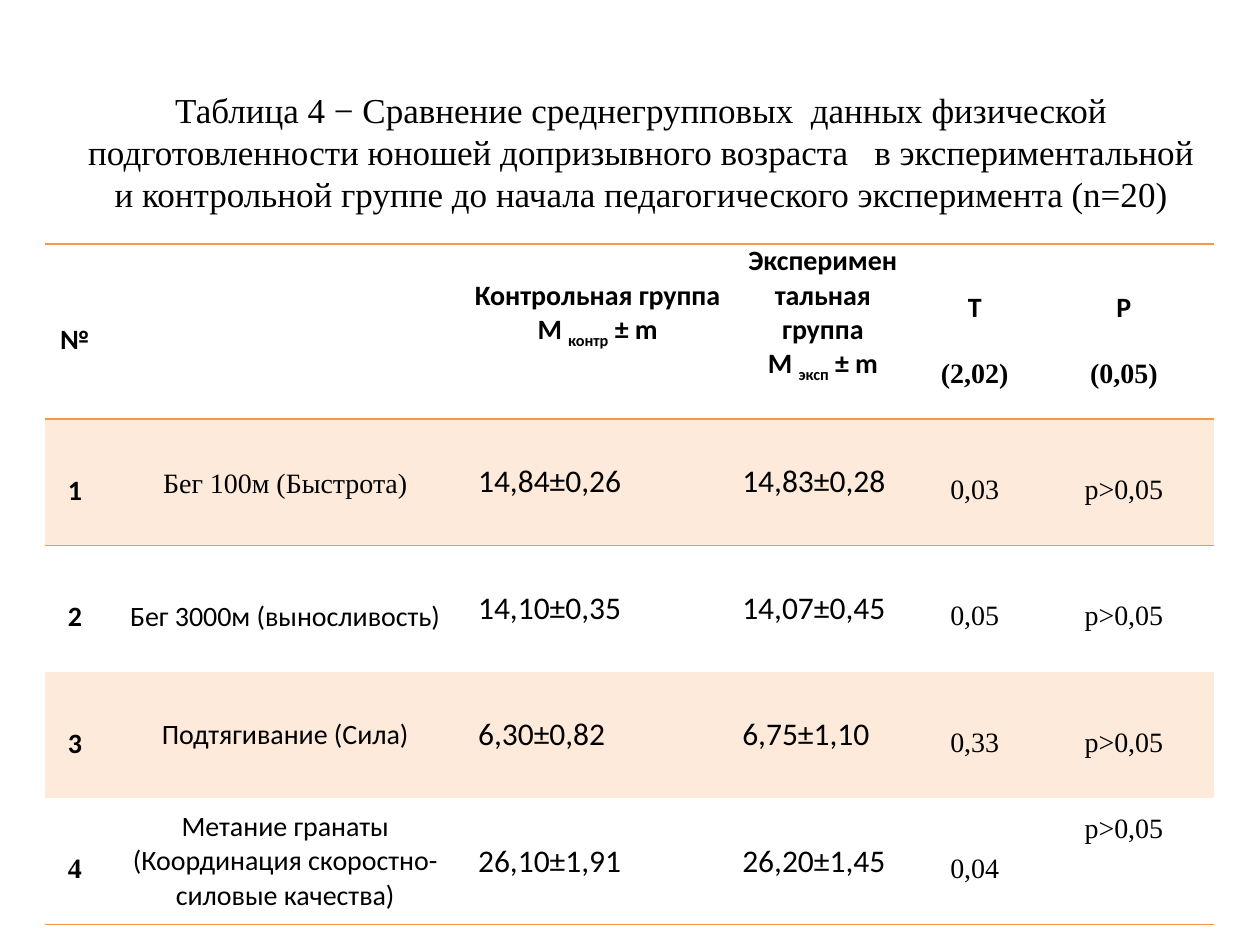
from lxml import etree
from pptx import Presentation
from pptx.dml.color import RGBColor
from pptx.enum.text import MSO_ANCHOR, MSO_AUTO_SIZE, PP_ALIGN
from pptx.oxml.ns import qn
from pptx.util import Pt

CENTER, LEFT = PP_ALIGN.CENTER, PP_ALIGN.LEFT
MIDDLE, TOP = MSO_ANCHOR.MIDDLE, MSO_ANCHOR.TOP
NO_AUTOFIT = MSO_AUTO_SIZE.NONE

COLORS = {"text": "000000", "rule": "F79646", "band": "FDEADA"}
SANS, SERIF = "Calibri", "Times New Roman"
PLAIN_TABLE_STYLE = "{2D5ABB26-0587-4C30-8999-92F81FD0307C}"

TITLE = (
    "Таблица 4 − Сравнение среднегрупповых  данных физической "
    "подготовленности юношей допризывного возраста   в экспериментальной "
    "и контрольной группе до начала педагогического эксперимента (n=20)"
)
COLUMN_WIDTHS = [34.5, 206, 151, 106.5, 67, 103.5]
HEADER_HEIGHT, ROW_HEIGHT = 98, 72.25
HEADER_LINE = 19.5

TIGHT = {"alignment": CENTER}
RELAXED = {"alignment": CENTER, "line_spacing": 1.5, "space_after": Pt(10)}
LOOSE = {"alignment": CENTER, "line_spacing": 1.15}
FLUSH = {"alignment": LEFT}

BOLD = {"name": SANS, "size": Pt(16), "bold": True}
BOLD_SERIF = {**BOLD, "name": SERIF}
BODY = {**BOLD, "bold": False}
BODY_SERIF = {**BODY, "name": SERIF}
MEASURE = {**BODY, "size": Pt(18)}

# Each test: name, paragraph format, font, control, experimental, T
TESTS = [
    ("Бег 100м (Быстрота)", LOOSE, BODY_SERIF, "14,84±0,26", "14,83±0,28", "0,03"),
    ("Бег 3000м (выносливость)", RELAXED, BODY, "14,10±0,35", "14,07±0,45", "0,05"),
    ("Подтягивание (Сила)", TIGHT, BODY, "6,30±0,82", "6,75±1,10", "0,33"),
    ("Метание гранаты (Координация скоростно-силовые качества)", TIGHT, BODY,
     "26,10±1,91", "26,20±1,45", "0,04"),
]


def apply(target, values):
    for name, value in values.items():
        setattr(target, name, value)


def add_span(para, text, font, subscript=False):
    span = para.add_run()
    span.text = text
    apply(span.font, font)
    span.font.color.rgb = RGBColor.from_string(COLORS["text"])
    if subscript:
        span.font._element.set("baseline", "-25000")


def next_para(frame, layout):
    """Return the empty first paragraph, or a new one, with its format set."""
    first = frame.paragraphs[0]
    para = frame.add_paragraph() if first.runs else first
    apply(para, layout)
    return para


def write_cell(cell, text, layout, font):
    """Write each line of text as a paragraph in a narrow-margin cell."""
    apply(cell, {"vertical_anchor": MIDDLE, "margin_left": Pt(4.5),
                 "margin_right": Pt(4.5), "margin_top": 0, "margin_bottom": 0})
    for line in text.split("\n"):
        add_span(next_para(cell.text_frame, layout), line, font)


def write_measure(cell, text):
    cell.vertical_anchor = MIDDLE
    add_span(next_para(cell.text_frame, FLUSH), text, MEASURE)


def write_group_header(cell, name, index):
    write_cell(cell, name, TIGHT, BOLD)
    cell.margin_bottom = Pt(HEADER_LINE)
    para = next_para(cell.text_frame, TIGHT)
    add_span(para, "М ", BOLD)
    add_span(para, index, BOLD, subscript=True)
    add_span(para, " ± m", BOLD)


def write_critical_header(cell, symbol, value):
    write_cell(cell, symbol, RELAXED, BOLD)
    add_span(next_para(cell.text_frame, RELAXED), value, BOLD_SERIF)


def rule_cell(cell, sides):
    properties = cell._tc.get_or_add_tcPr()
    for side in sides:
        line = etree.SubElement(properties, qn(f"a:ln{side}"), w=str(Pt(1)))
        fill = etree.SubElement(line, qn("a:solidFill"))
        etree.SubElement(fill, qn("a:srgbClr"), val=COLORS["rule"])


def fill_cell(cell, banded):
    if banded:
        cell.fill.solid()
        cell.fill.fore_color.rgb = RGBColor.from_string(COLORS["band"])
    else:
        cell.fill.background()


def add_title(slide):
    title = slide.shapes.title
    apply(title, {"left": Pt(42.5), "top": Pt(16.5),
                  "width": Pt(648), "height": Pt(140.5)})
    apply(title.text_frame, {"vertical_anchor": MIDDLE, "word_wrap": True,
                             "auto_size": NO_AUTOFIT})
    para = next_para(title.text_frame, TIGHT)
    add_span(para, TITLE, {"name": SERIF, "size": Pt(20), "bold": False})


def add_results_table(slide):
    heights = [HEADER_HEIGHT] + [ROW_HEIGHT] * len(TESTS)
    table = slide.shapes.add_table(
        len(heights), len(COLUMN_WIDTHS), Pt(25.5), Pt(139.5),
        Pt(sum(COLUMN_WIDTHS)), Pt(sum(heights))).table
    apply(table, {"first_row": False, "horz_banding": False})
    table._tbl.tblPr.find(qn("a:tableStyleId")).text = PLAIN_TABLE_STYLE
    for column, width in zip(table.columns, COLUMN_WIDTHS):
        column.width = Pt(width)
    last = len(TESTS)
    for number, (row, height) in enumerate(zip(table.rows, heights)):
        row.height = Pt(height)
        for cell in row.cells:
            rule_cell(cell, {0: "TB", 1: "T", last: "B"}.get(number, ""))
            fill_cell(cell, number % 2 == 1)
    return table


def write_header(table):
    number, _, control, experimental, t_value, p_value = table.rows[0].cells
    write_cell(number, "№", RELAXED, BOLD)
    write_group_header(control, "Контрольная группа", "контр")
    write_group_header(experimental, "Эксперимен\nтальная группа", "эксп")
    write_critical_header(t_value, "T", "(2,02)")
    write_critical_header(p_value, "P", "(0,05)")


def write_tests(table):
    last = len(TESTS)
    for number, test in enumerate(TESTS, start=1):
        name, layout, font, control, experimental, t_value = test
        cells = list(table.rows[number].cells)
        write_cell(cells[0], str(number), RELAXED,
                   BOLD_SERIF if number == last else BOLD)
        write_cell(cells[1], name, layout, font)
        write_measure(cells[2], control)
        write_measure(cells[3], experimental)
        write_cell(cells[4], t_value, RELAXED, BODY_SERIF)
        write_cell(cells[5], "р>0,05", RELAXED, BODY_SERIF)
    table.cell(last, 5).vertical_anchor = TOP


def main():
    deck = Presentation()
    apply(deck, {"slide_width": Pt(720), "slide_height": Pt(540)})
    slide = deck.slides.add_slide(deck.slide_layouts.get_by_name("Title Only"))
    add_title(slide)
    table = add_results_table(slide)
    write_header(table)
    write_tests(table)
    deck.save("out.pptx")


if __name__ == "__main__":
    main()
